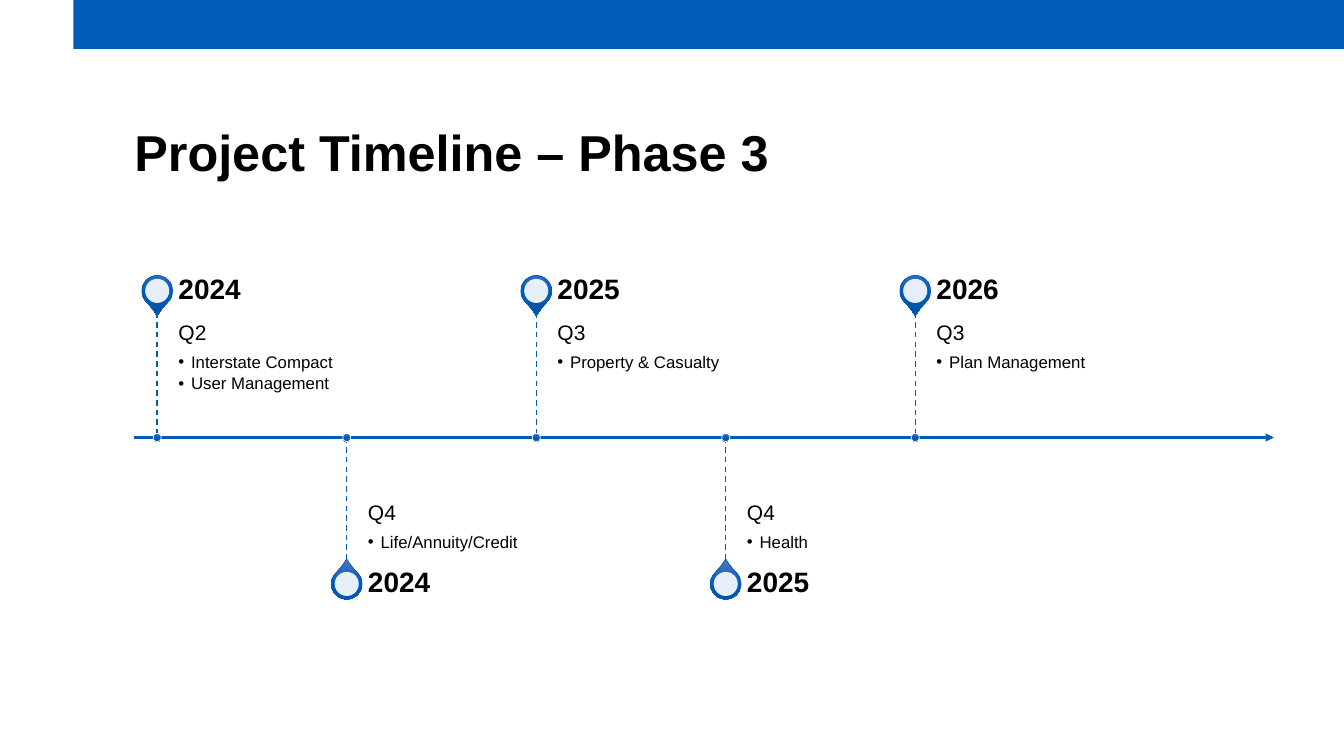
"""Build the Phase 3 project timeline slide."""
from dataclasses import dataclass

from lxml import etree
from pptx import Presentation
from pptx import util as u
from pptx.dml.color import RGBColor
from pptx.enum import dml, shapes, text
from pptx.oxml import ns

BLUE = RGBColor(0x00, 0x5C, 0xB9)
BLUE_LIGHT = RGBColor(0x4B, 0x71, 0xC2)
BLUE_DARK = RGBColor(0x00, 0x52, 0xA4)
WHITE = RGBColor(0xFF, 0xFF, 0xFF)
BLACK = RGBColor(0x00, 0x00, 0x00)

FONT = "Arial"
AXIS_Y = 312.5
FIRST_X = 112.3
STEP_X = 135.36
PIN_SIZE = 22
PIN_HOLE_SIZE = 17.2
DOT_SIZE = 5.8
LABEL_OFFSET = 15.2
LABEL_WIDTH = 225.4
YEAR_HEIGHT = 31


@dataclass(frozen=True)
class Milestone:
    year: str
    quarter: str
    items: tuple[str, ...]


@dataclass(frozen=True)
class Side:
    pin_y: float
    pin_rotation: int
    stem_end: float
    year_top: float
    detail_anchor: text.MSO_ANCHOR
    detail_insets: tuple[float, float, float, float]


ABOVE = Side(207.8, 135, 223.2, 192.2, text.MSO_ANCHOR.TOP, (0, 7.2, 7.2, 11.5))
BELOW = Side(417.1, 315, 401.4, 401.4, text.MSO_ANCHOR.BOTTOM, (0, 11.5, 0, 7.2))

MILESTONES = (
    Milestone("2024", "Q2", ("Interstate Compact", "User Management")),
    Milestone("2024", "Q4", ("Life/Annuity/Credit",)),
    Milestone("2025", "Q3", ("Property & Casualty",)),
    Milestone("2025", "Q4", ("Health",)),
    Milestone("2026", "Q3", ("Plan Management",)),
)


def add_child(parent, tag: str, **attributes: str):
    return etree.SubElement(parent, ns.qn(tag), attributes)


def add_filled(slide, kind, left: float, top: float, width: float, height: float,
               fill: RGBColor):
    shape = slide.shapes.add_shape(kind, u.Pt(left), u.Pt(top), u.Pt(width), u.Pt(height))
    shape.shadow.inherit = False
    shape.fill.solid()
    shape.fill.fore_color.rgb = fill
    shape.line.fill.background()
    return shape


def add_round(slide, kind, x: float, y: float, size: float, fill: RGBColor):
    return add_filled(slide, kind, x - size / 2, y - size / 2, size, size, fill)


def shade(shape, outline: RGBColor) -> None:
    solid = shape.fill._xPr.find(ns.qn("a:solidFill"))
    gradient = etree.Element(ns.qn("a:gradFill"), rotWithShape="0")
    stops = add_child(gradient, "a:gsLst")
    for position, color in ((0, BLUE_LIGHT), (50000, BLUE), (100000, BLUE_DARK)):
        stop = add_child(stops, "a:gs", pos=str(position))
        add_child(stop, "a:srgbClr", val=str(color))
    add_child(gradient, "a:lin", ang="5400000", scaled="0")
    solid.getparent().replace(solid, gradient)
    shape.line.color.rgb = outline
    shape.line.width = u.Pt(0.5)


def add_line(slide, start: tuple[float, float], end: tuple[float, float], width: float):
    line = slide.shapes.add_connector(
        shapes.MSO_CONNECTOR.STRAIGHT, *(u.Pt(value) for value in (*start, *end)))
    line.line.color.rgb = BLUE
    line.line.width = u.Pt(width)
    add_child(line._element.spPr, "a:effectLst")
    return line


def add_text_box(slide, left: float, top: float, width: float, height: float,
                 anchor: text.MSO_ANCHOR,
                 insets: tuple[float, float, float, float] = (0, 0, 0, 0)):
    box = slide.shapes.add_textbox(u.Pt(left), u.Pt(top), u.Pt(width), u.Pt(height))
    frame = box.text_frame
    frame.word_wrap = True
    frame.vertical_anchor = anchor
    (frame.margin_left, frame.margin_top,
     frame.margin_right, frame.margin_bottom) = (u.Pt(inset) for inset in insets)
    return frame


def write(frame, content: str, *, size: float, bold: bool = False,
          space_after: float = 0, bullet: bool = False) -> None:
    paragraph = frame.paragraphs[0]
    if paragraph.runs:
        paragraph = frame.add_paragraph()
    if bullet:
        paragraph.level = 1
        properties = paragraph._p.get_or_add_pPr()
        properties.set("marL", str(u.Pt(9)))
        properties.set("indent", str(u.Pt(-9)))
        add_child(properties, "a:buFont", typeface=FONT)
        add_child(properties, "a:buChar", char="•")
    paragraph.line_spacing = 0.9
    paragraph.space_after = u.Pt(space_after)
    run = paragraph.add_run()
    run.text = content
    run.font.name = FONT
    run.font.size = u.Pt(size)
    run.font.bold = bold
    run.font.color.rgb = BLACK


def add_milestone(slide, milestone: Milestone, x: float, side: Side) -> None:
    pin = add_round(slide, shapes.MSO_SHAPE.TEAR, x, side.pin_y, PIN_SIZE, BLUE)
    pin.adjustments[0] = 1.15
    pin.rotation = side.pin_rotation
    shade(pin, BLUE)

    hole = add_round(slide, shapes.MSO_SHAPE.OVAL, x, side.pin_y, PIN_HOLE_SIZE, WHITE)
    white = hole.fill._xPr.find(ns.qn("a:solidFill"))[0]
    add_child(white, "a:alpha", val="90000")

    label_left = x + LABEL_OFFSET
    detail_top, detail_bottom = sorted((side.stem_end, AXIS_Y))
    details = add_text_box(slide, label_left, detail_top, LABEL_WIDTH,
                           detail_bottom - detail_top, side.detail_anchor,
                           side.detail_insets)
    write(details, milestone.quarter, size=15, space_after=6.3)
    for item in milestone.items:
        write(details, item, size=12, space_after=2.2, bullet=True)

    year = add_text_box(slide, label_left, side.year_top, LABEL_WIDTH, YEAR_HEIGHT,
                        text.MSO_ANCHOR.MIDDLE, (0, 0, 10, 0))
    write(year, milestone.year, size=20, bold=True)

    stem = add_line(slide, (x, detail_top), (x, detail_bottom), 1)
    stem.line.dash_style = dml.MSO_LINE.DASH
    dot = add_round(slide, shapes.MSO_SHAPE.OVAL, x, AXIS_Y, DOT_SIZE, BLUE)
    shade(dot, WHITE)


def main() -> None:
    deck = Presentation()
    deck.slide_width, deck.slide_height = u.Pt(960), u.Pt(540)
    slide = deck.slides.add_slide(deck.slide_layouts[6])

    add_filled(slide, shapes.MSO_SHAPE.RECTANGLE, 52.5, 0, 907.5, 35, BLUE)
    title = add_text_box(slide, 96, 87.8, 813.6, 42.5, text.MSO_ANCHOR.BOTTOM)
    write(title, "Project Timeline – Phase 3", size=36, bold=True)

    axis = add_line(slide, (96, AXIS_Y), (910, AXIS_Y), 1.5)
    add_child(axis.line._get_or_add_ln(), "a:tailEnd", type="triangle")

    for index, milestone in enumerate(MILESTONES):
        side = BELOW if index % 2 else ABOVE
        add_milestone(slide, milestone, FIRST_X + index * STEP_X, side)

    deck.save("out.pptx")


if __name__ == "__main__":
    main()
